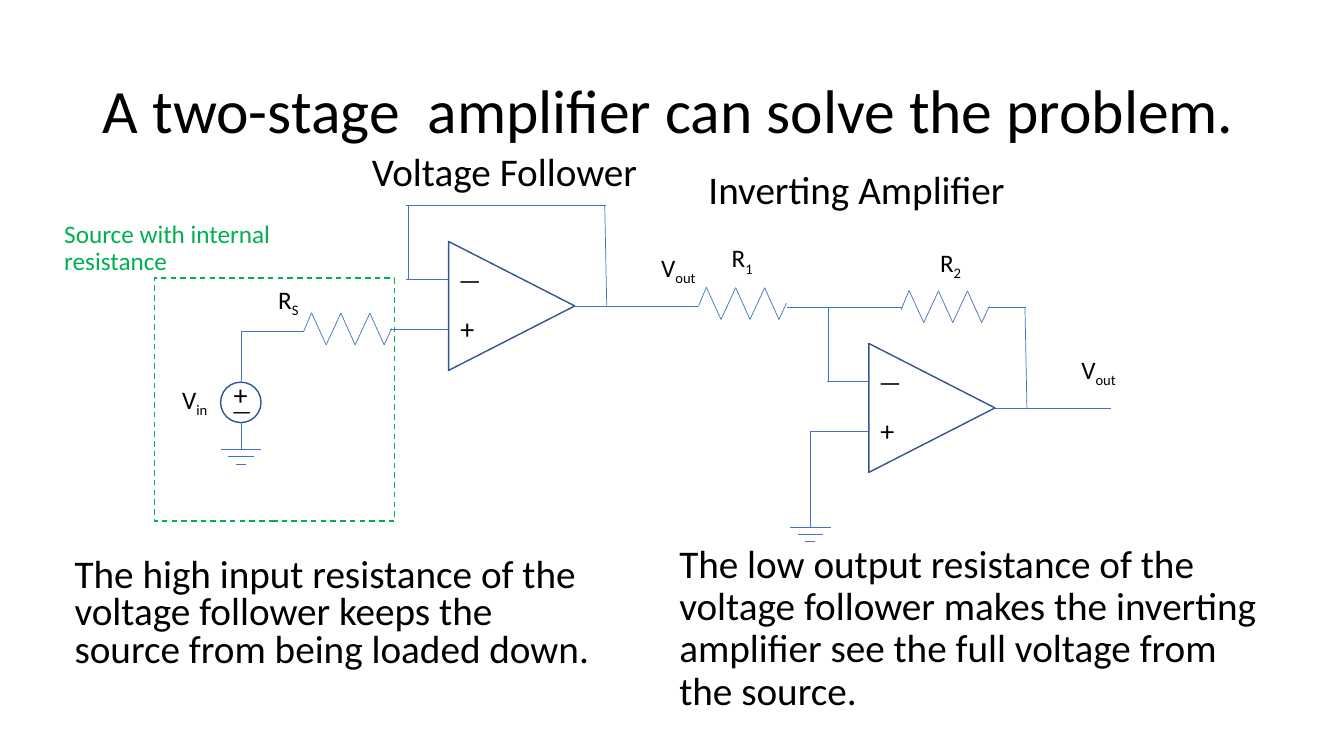
"""Build a slide showing a voltage follower feeding an inverting amplifier."""
from dataclasses import dataclass
from itertools import pairwise

from lxml import etree
from pptx import Presentation
from pptx.dml.color import RGBColor
from pptx.enum.dml import MSO_LINE
from pptx.enum.shapes import MSO_CONNECTOR, MSO_SHAPE
from pptx.enum.text import MSO_ANCHOR, MSO_AUTO_SIZE, PP_ALIGN
from pptx.oxml.ns import qn
from pptx.util import Cm, Pt

STRAIGHT = MSO_CONNECTOR.STRAIGHT
TRIANGLE, CIRCLE, BOX = MSO_SHAPE.ISOSCELES_TRIANGLE, MSO_SHAPE.OVAL, MSO_SHAPE.RECTANGLE
TOP, MIDDLE, LEFT, NO_FIT = MSO_ANCHOR.TOP, MSO_ANCHOR.MIDDLE, PP_ALIGN.LEFT, MSO_AUTO_SIZE.NONE
DASH = MSO_LINE.DASH

COLORS = {"text": "000000", "wire": "4472C4", "symbol": "325491", "source": "00B050"}

Point = tuple[float, float]


@dataclass(frozen=True)
class Caption:
    text: str
    left: float
    top: float
    width: float = 1.45
    height: float = 1.02
    size: float = 18
    subscript: str = ""
    color: str = "text"
    line_spacing: float = 1.0
    space_before: float = 0
    anchor: MSO_ANCHOR = TOP


@dataclass(frozen=True)
class Symbol:
    kind: MSO_SHAPE
    left: float
    top: float
    width: float
    height: float
    color: str = "symbol"
    rotation: float = 0


@dataclass(frozen=True)
class Resistor:
    start: Point
    subscript: str
    label_at: Point


TITLE = Caption("A two-stage  amplifier can solve the problem.", 2.34, 1.02, 29.21, 3.68,
                44, line_spacing=0.9, anchor=MIDDLE)
INVERTING = Caption("Inverting Amplifier", 17.6, 4.17, 8.92, 1.63, 28,
                    line_spacing=0.9, space_before=10)
CAPTIONS = [
    Caption("Voltage Follower", 9.12, 3.73, 7.59, 1.63, 28, line_spacing=0.9, space_before=10),
    Caption("The low output resistance of the voltage follower makes the inverting amplifier "
            "see the full voltage from the source.", 16.87, 13.59, 15.06, 4.95, 28,
            line_spacing=0.9, space_before=10),
    Caption("The high input resistance of the voltage follower keeps the source from being "
            "loaded down.", 1.63, 13.94, 13.72, 3.25, 28, line_spacing=0.8, space_before=10),
    Caption("Source with internal resistance", 1.37, 5.46, 5.72, 1.83, color="source",
            line_spacing=0.9, space_before=10),
    Caption("+", 5.64, 9.4, 0.86, 1.12, 20),
    Caption("—", 5.59, 9.88, 0.86, 0.94, 16),
    Caption("V", 4.34, 9.55, subscript="in"),
]
SOURCE_BOX = Symbol(BOX, 3.89, 7.01, 6.05, 6.12, "source")
SOURCE_CIRCLE = Symbol(CIRCLE, 5.56, 9.63, 1.02, 1.02)

OP_AMP_CENTERS = [(12.9, 7.71), (23.49, 10.28)]
OP_AMP_LEADS = [((-2.66, -0.67), (-1.6, -0.67)),
                ((-3.07, 0.6), (-1.6, 0.6)),
                ((1.58, 0), (4.52, 0))]

RESISTORS = [Resistor((7.65, 8.36), "S", (6.76, 7.04)),
             Resistor((17.6, 7.72), "1", (18.19, 5.99)),
             Resistor((22.71, 7.8), "2", (23.44, 6.1))]
ZIGZAG = [(0, 0), (0.2, -0.48), (0.57, 0.33), (0.94, -0.47),
          (1.3, 0.33), (1.67, -0.47), (2.03, 0.33), (2.22, -0.08)]

GROUNDS = [(6.07, 11.33), (20.42, 13.28)]
GROUND_HALF_WIDTHS = [0.51, 0.32, 0.13]
GROUND_STEP = 0.18

WIRES = [
    ((10.29, 7.04), (10.29, 5.16)),
    ((15.27, 5.18), (10.24, 5.18)),
    ((15.29, 7.7), (15.24, 5.16)),
    ((17.6, 7.72), (16.46, 7.72)),
    ((19.84, 7.75), (22.73, 7.75)),
    ((20.88, 9.63), (20.88, 7.75)),
    ((25.88, 10.29), (25.83, 7.75)),
    ((25.86, 7.75), (24.92, 7.75)),
    ((20.42, 13.28), (20.42, 10.87)),
    ((7.65, 8.36), (6.07, 8.36)),
    ((6.07, 9.6), (6.07, 8.36)),
    ((6.07, 11.33), (6.07, 10.64)),
]


def apply_format(target, values: dict) -> None:
    for attribute, value in values.items():
        setattr(target, attribute, value)


def rgb(color: str) -> RGBColor:
    return RGBColor.from_string(COLORS[color])


def shifted(origin: Point, offset: Point) -> Point:
    return origin[0] + offset[0], origin[1] + offset[1]


def write_caption(holder, caption: Caption) -> None:
    frame = holder.text_frame
    apply_format(frame, {"word_wrap": True, "auto_size": NO_FIT,
                         "vertical_anchor": caption.anchor})
    paragraph = frame.paragraphs[0]
    apply_format(paragraph, {"alignment": LEFT, "line_spacing": caption.line_spacing,
                             "space_before": Pt(caption.space_before)})
    for part in filter(None, (caption.text, caption.subscript)):
        run = paragraph.add_run()
        run.text = part
        apply_format(run.font, {"name": "Calibri", "size": Pt(caption.size)})
        run.font.color.rgb = rgb(caption.color)
    if caption.subscript:
        run._r.get_or_add_rPr().set("baseline", "-25000")


def add_caption(slide, caption: Caption) -> None:
    write_caption(slide.shapes.add_textbox(Cm(caption.left), Cm(caption.top), Cm(caption.width),
                                           Cm(caption.height)), caption)


def fill_placeholder(placeholder, caption: Caption) -> None:
    apply_format(placeholder, {side: Cm(getattr(caption, side))
                               for side in ("left", "top", "width", "height")})
    write_caption(placeholder, caption)
    properties = placeholder.text_frame.paragraphs[0]._p.get_or_add_pPr()
    apply_indent = {"marL": "0", "indent": "0"}
    for attribute, value in apply_indent.items():
        properties.set(attribute, value)
    etree.SubElement(properties, qn("a:buNone"))


def add_symbol(slide, symbol: Symbol):
    shape = slide.shapes.add_shape(symbol.kind, Cm(symbol.left), Cm(symbol.top),
                                   Cm(symbol.width), Cm(symbol.height))
    shape.rotation = symbol.rotation
    shape.shadow.inherit = False
    shape.fill.background()
    shape.line.color.rgb = rgb(symbol.color)
    shape.line.width = Pt(1)
    return shape


def add_wire(slide, start: Point, end: Point) -> None:
    wire = slide.shapes.add_connector(STRAIGHT, *map(Cm, start + end))
    wire.line.color.rgb = rgb("wire")
    wire.line.width = Pt(0.5)
    etree.SubElement(wire._element.spPr, qn("a:effectLst"))


def add_op_amp(slide, center: Point) -> None:
    x, y = center
    add_symbol(slide, Symbol(TRIANGLE, x - 1.63, y - 1.59, 3.25, 3.18, rotation=90))
    add_caption(slide, Caption("—", x - 1.6, y - 1.18, 0.86))
    add_caption(slide, Caption("+", x - 1.55, y + 0.01, 0.86, 1.12, 20))
    add_caption(slide, Caption("V", x + 3.51, y - 1.48, subscript="out"))
    for start, end in OP_AMP_LEADS:
        add_wire(slide, shifted(center, start), shifted(center, end))


def add_resistor(slide, resistor: Resistor) -> None:
    for start, end in pairwise(shifted(resistor.start, corner) for corner in ZIGZAG):
        add_wire(slide, start, end)
    add_caption(slide, Caption("R", *resistor.label_at, subscript=resistor.subscript))


def add_ground(slide, top: Point) -> None:
    for level, half in enumerate(GROUND_HALF_WIDTHS):
        drop = level * GROUND_STEP
        add_wire(slide, shifted(top, (-half, drop)), shifted(top, (half, drop)))


def main() -> None:
    deck = Presentation()
    apply_format(deck, {"slide_width": Cm(33.87), "slide_height": Cm(19.05)})
    slide = deck.slides.add_slide(deck.slide_layouts[1])
    fill_placeholder(slide.shapes.title, TITLE)
    fill_placeholder(slide.placeholders[1], INVERTING)
    add_symbol(slide, SOURCE_BOX).line.dash_style = DASH
    add_symbol(slide, SOURCE_CIRCLE)
    for draw, parts in ((add_op_amp, OP_AMP_CENTERS), (add_resistor, RESISTORS),
                        (add_ground, GROUNDS), (add_caption, CAPTIONS)):
        for part in parts:
            draw(slide, part)
    for start, end in WIRES:
        add_wire(slide, start, end)
    deck.save("out.pptx")


if __name__ == "__main__":
    main()
